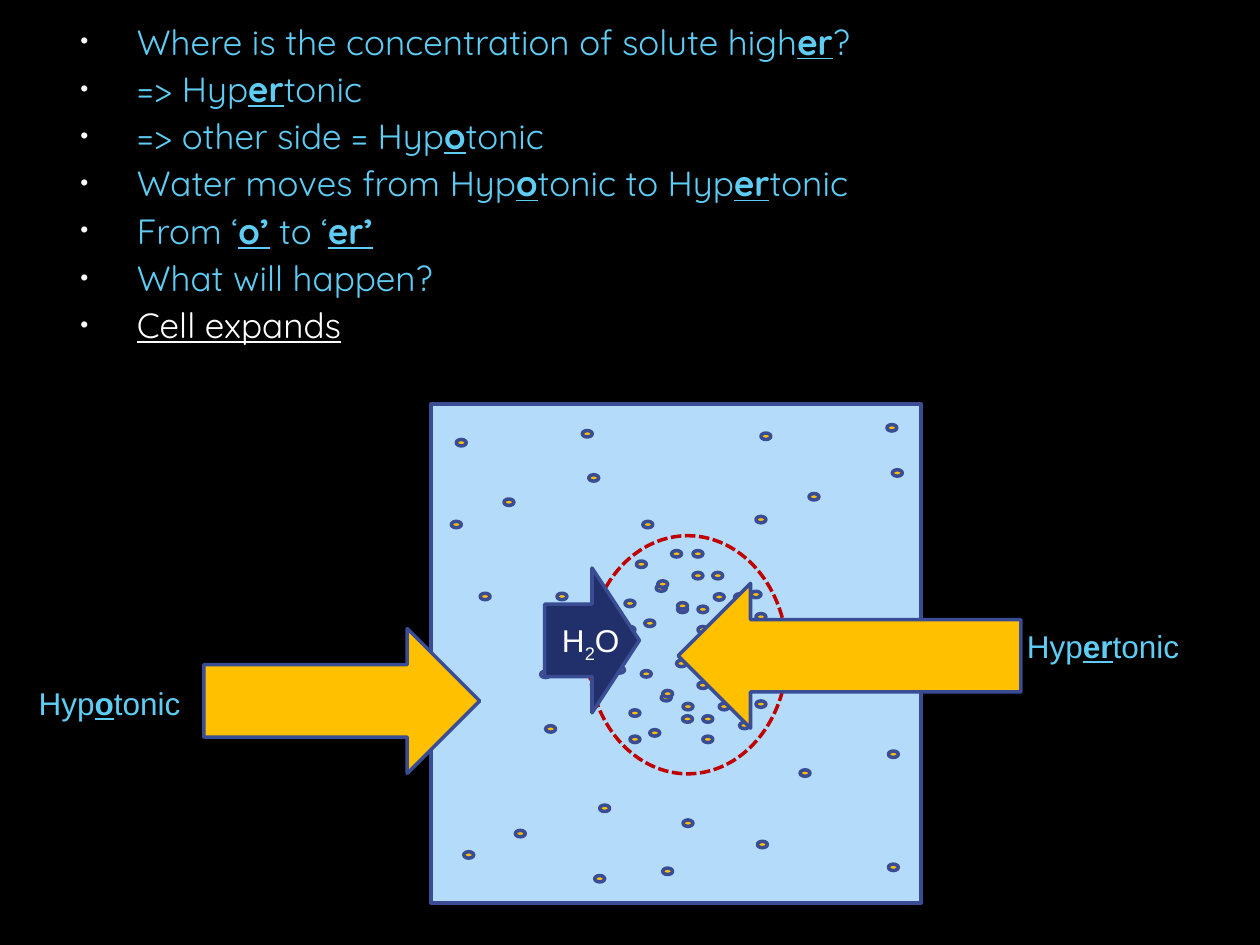
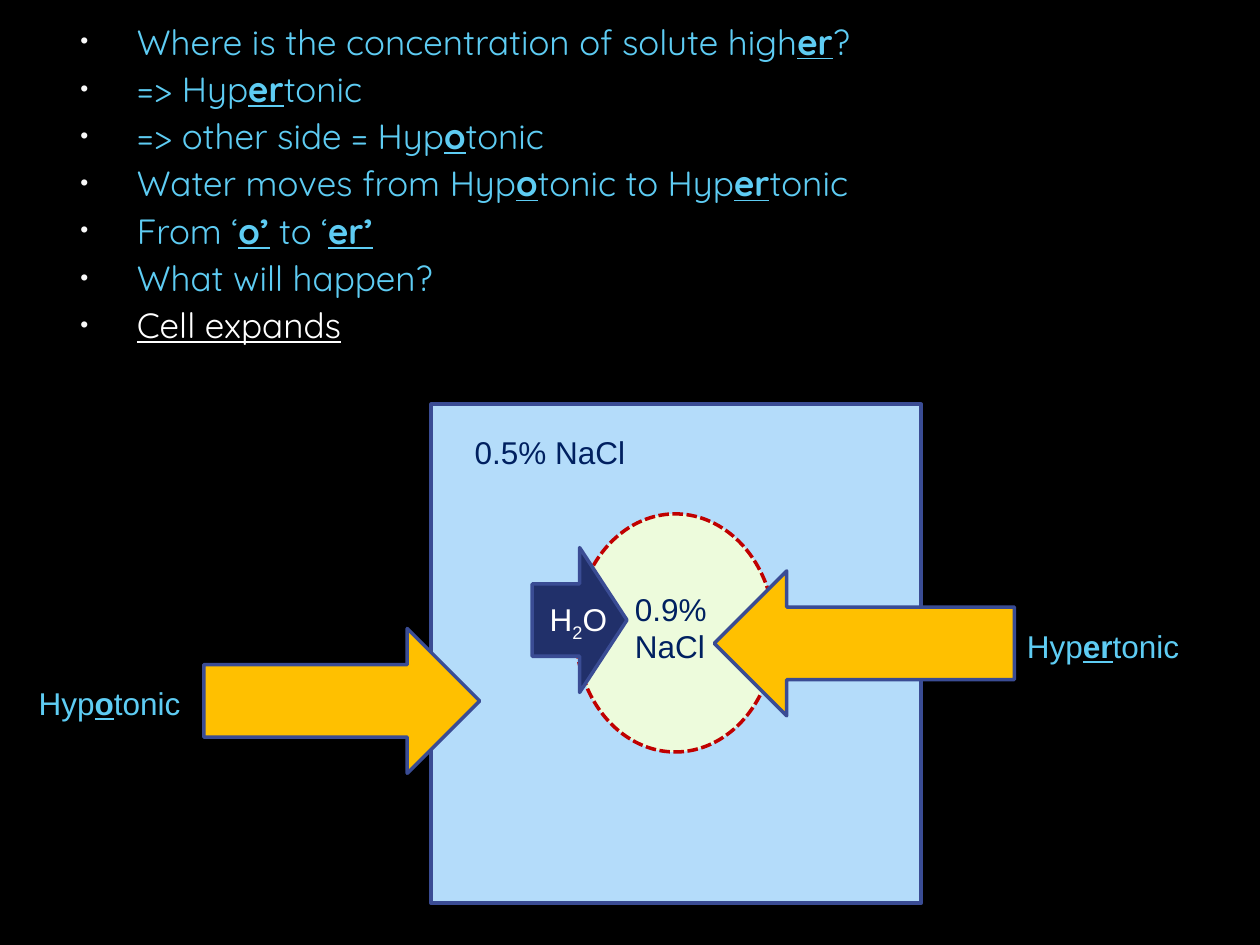
from lxml import etree
from pptx import Presentation
from pptx.dml.color import RGBColor
from pptx.enum.dml import MSO_LINE
from pptx.enum.shapes import MSO_SHAPE
from pptx.oxml.ns import qn
from pptx.util import Cm, Pt

RECTANGLE = MSO_SHAPE.RECTANGLE
OVAL = MSO_SHAPE.OVAL
RIGHT_ARROW = MSO_SHAPE.RIGHT_ARROW
LEFT_ARROW = MSO_SHAPE.LEFT_ARROW
DASHED = MSO_LINE.SQUARE_DOT

BLACK = "000000"
WHITE = "FFFFFF"
SKY = "5ECCF3"
BULLET = "F9F9F9"
WATER = "B4DCFA"
CYTOPLASM = "EDFBDC"
GOLD = "FFC000"
OUTLINE = "3A4C94"
MEMBRANE = "C00000"
NAVY = "21306A"
INK = "002060"

BODY_FONT = "Quicksand"
LABEL_FONT = "Arial"

TANK = (8.69, 8.15, 9.88, 10.06)
CELL_SIZE = (4.01, 4.8)
ARROW_HEIGHT = 2.92
LABEL_HEIGHT = 1.02
BEAD_SIZE = (0.2, 0.13)

QUESTIONS = [
    "Where is the concentration of solute high*er*?",
    "=> Hyp*er*tonic",
    "=> other side = Hyp*o*tonic",
    "Water moves from Hyp*o*tonic to Hyp*er*tonic",
    "From ‘*o’* to ‘*er’*",
    "What will happen?",
]
ANSWER = "Cell expands"

TANK_BEADS = [
    (0.99, 3.81), (2.21, 5.38), (3.4, 8.08), (4.67, 9.35), (5.08, 8.38),
    (2.31, 6.48), (0.66, 9.02), (3.3, 9.5), (1.7, 8.59), (2.54, 3.81),
    (3.05, 0.53), (3.18, 1.42), (4.27, 2.36), (0.51, 0.71), (0.41, 2.36),
    (1.47, 1.91), (9.22, 6.99), (6.58, 8.81), (9.22, 9.27), (7.44, 7.37),
    (9.19, 0.41), (9.3, 1.32), (6.65, 0.58), (6.55, 2.26), (7.62, 1.8),
]
CLUSTER = [
    (3.28, 1.12), (0.74, 1.3), (1.37, 0.99), (2.21, 1.42), (1.68, 0.3),
    (1.14, 1.7), (1.8, 1.42), (0.97, 0.51), (2.11, 0.74), (2.21, 1.83),
    (0.74, 1.83), (1.4, 0.91), (2.54, 1.17),
]
CLUSTER_SHIFT = (0.1, 2.21)
LOOSE_BEADS = [
    (2.11, 0.3), (2.51, 0.74), (2.95, 1.17), (3.38, 1.57), (1.8, 1.35),
    (3.05, 3.76), (1.91, 3.38), (0.53, 2.64),
]


def color(value):
    return RGBColor.from_string(value)


def add_figure(page, kind, left, top, width, height, fill, line=OUTLINE):
    figure = page.shapes.add_shape(kind, Cm(left), Cm(top), Cm(width), Cm(height))
    figure.shadow.inherit = False
    figure.fill.solid()
    figure.fill.fore_color.rgb = color(fill)
    figure.line.color.rgb = color(line)
    figure.line.width = Pt(2)
    return figure


def emphasize(span):
    span.font.bold = True
    span.font.underline = True


def lower(span):
    span._r.get_or_add_rPr().set("baseline", "-25000")


def write_para(para, text, font, size, ink, mark=emphasize):
    para.font.name = font
    para.font.size = Pt(size)
    para.font.color.rgb = color(ink)
    for index, piece in enumerate(text.split("*")):
        if piece:
            span = para.add_run()
            span.text = piece
            if index % 2:
                mark(span)


def add_paras(frame, count):
    return [frame.paragraphs[0]] + [frame.add_paragraph() for _ in range(count - 1)]


def add_label(page, left, top, width, lines, ink, mark=emphasize):
    box = page.shapes.add_textbox(
        Cm(left), Cm(top), Cm(width), Cm(LABEL_HEIGHT * len(lines)))
    box.text_frame.word_wrap = False
    for para, line in zip(add_paras(box.text_frame, len(lines)), lines):
        write_para(para, line, LABEL_FONT, 18, ink, mark)


def add_bullet(para):
    properties = para._p.get_or_add_pPr()
    properties.set("marL", str(Cm(1.52)))
    properties.set("indent", str(Cm(-1.14)))
    bullet_color = etree.SubElement(properties, qn("a:buClr"))
    etree.SubElement(bullet_color, qn("a:srgbClr"), val=BULLET)
    etree.SubElement(properties, qn("a:buSzPct"), val="65000")
    etree.SubElement(properties, qn("a:buFont"), typeface=LABEL_FONT)
    etree.SubElement(properties, qn("a:buChar"), char="•")


def add_questions(page, left, top, width, height):
    box = page.shapes.add_textbox(Cm(left), Cm(top), Cm(width), Cm(height))
    box.text_frame.word_wrap = True
    paras = add_paras(box.text_frame, len(QUESTIONS) + 1)
    for index, para in enumerate(paras):
        add_bullet(para)
        if index:
            para.space_before = Pt(3)
    for para, question in zip(paras, QUESTIONS):
        write_para(para, question, BODY_FONT, 20, SKY)
    write_para(paras[-1], ANSWER, BODY_FONT, 20, WHITE)
    paras[-1].runs[0].font.underline = True


def add_beads(page, left, top, beads):
    for across, down in beads:
        add_figure(page, OVAL, left + across, top + down, *BEAD_SIZE, GOLD)


def add_cell(page, left, top, fill):
    cell = add_figure(page, OVAL, left, top, *CELL_SIZE, fill, MEMBRANE)
    cell.line.dash_style = DASHED


def add_cell_beads(page, left, top):
    shift_across, shift_down = CLUSTER_SHIFT
    add_beads(page, left, top, CLUSTER + LOOSE_BEADS)
    add_beads(page, left + shift_across, top + shift_down, CLUSTER)


def add_water_arrow(page, left, top):
    add_figure(page, RIGHT_ARROW, left, top, 1.91, ARROW_HEIGHT, NAVY)
    add_label(page, left + 0.1, top + 0.94, 1.7, ["H*2*O"], WHITE, lower)


def add_hypotonic_side(page, left, top):
    add_label(page, left, top + 1.0, 3.4, ["Hyp*o*tonic"], SKY)
    add_figure(page, RIGHT_ARROW, left + 3.58, top, 5.56, ARROW_HEIGHT, GOLD)


def add_hypertonic_arrow(page, left, top, width):
    add_figure(page, LEFT_ARROW, left, top, width, ARROW_HEIGHT, GOLD)


def start_page(deck):
    page = deck.slides.add_slide(deck.slide_layouts[6])
    page.background.fill.solid()
    page.background.fill.fore_color.rgb = color(BLACK)
    add_questions(page, 0.99, 0.28, 23.93, 7.82)
    add_figure(page, RECTANGLE, *TANK, WATER)
    add_hypotonic_side(page, 0.53, 12.67)
    add_label(page, 20.45, 12.52, 3.61, ["Hyp*er*tonic"], SKY)
    return page


def add_bead_page(deck, cell_left, cell_top):
    page = start_page(deck)
    add_beads(page, *TANK[:2], TANK_BEADS)
    add_cell(page, cell_left, cell_top, WATER)
    add_cell_beads(page, cell_left, cell_top)
    add_hypertonic_arrow(page, cell_left + 1.81, cell_top + 0.96, 6.91)
    add_water_arrow(page, cell_left - 0.88, cell_top + 0.65)


def add_percentage_page(deck, cell_left, cell_top):
    page = start_page(deck)
    add_cell(page, cell_left, cell_top, CYTOPLASM)
    add_hypertonic_arrow(page, cell_left + 2.79, cell_top + 1.15, 6.05)
    add_water_arrow(page, cell_left - 0.88, cell_top + 0.68)
    add_label(page, TANK[0] + 0.63, TANK[1] + 0.46, 3.58, ["0.5% NaCl"], INK)
    add_label(page, cell_left + 0.94, cell_top + 1.4, 2.16, ["0.9%", "NaCl"], INK)


def main():
    deck = Presentation()
    deck.slide_width = Cm(25.4)
    deck.slide_height = Cm(19.05)
    add_bead_page(deck, 11.86, 10.8)
    add_percentage_page(deck, 11.61, 10.36)
    deck.save("out.pptx")


if __name__ == "__main__":
    main()
